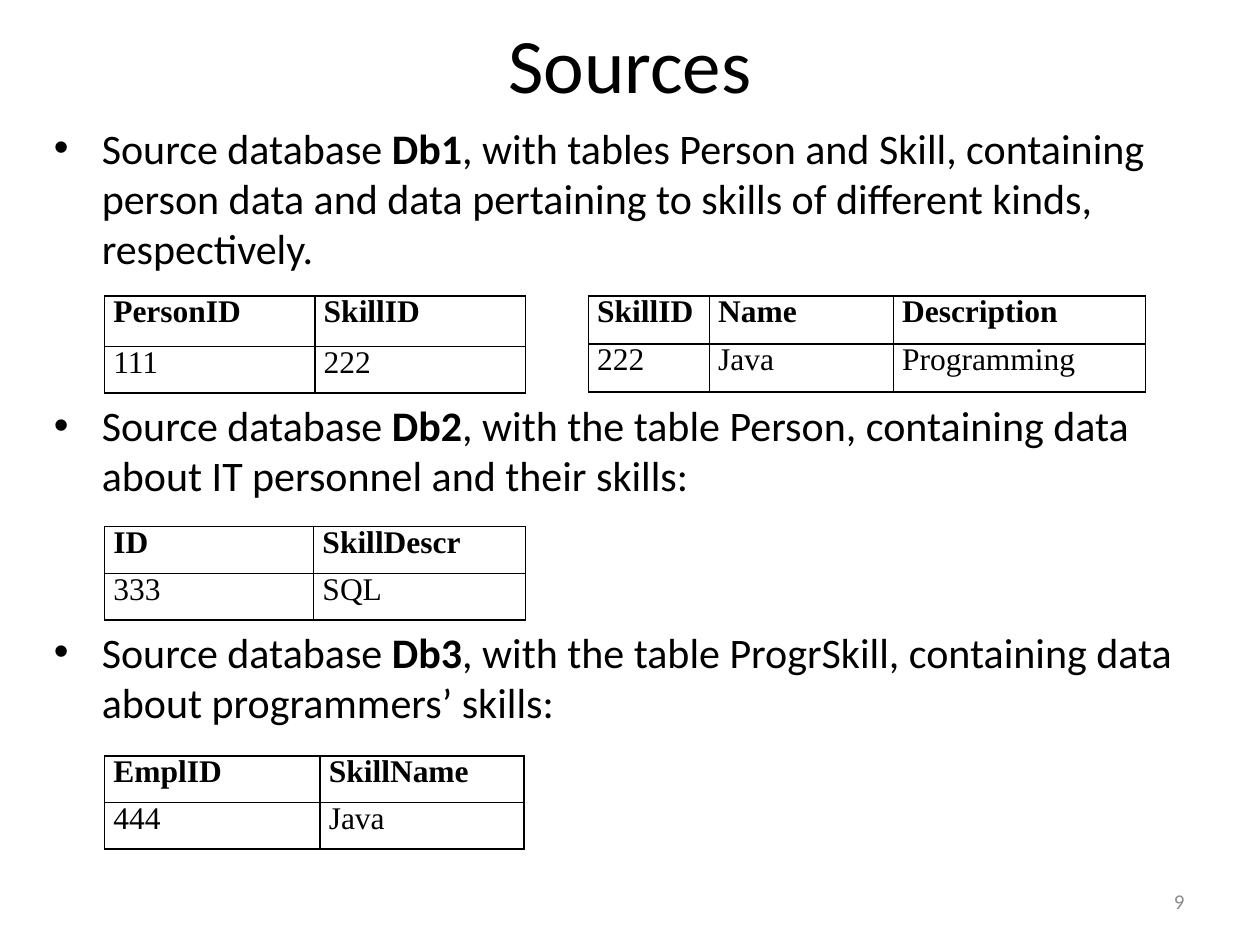
from pptx import Presentation
from pptx.dml.color import RGBColor
from pptx.enum.text import MSO_ANCHOR, PP_ALIGN
from pptx.oxml import parse_xml
from pptx.oxml.ns import nsdecls
from pptx.util import Inches, Pt

BLACK = RGBColor(0x00, 0x00, 0x00)
GRAY = RGBColor(0x8C, 0x8C, 0x8C)


def style(r, size, color=BLACK, font="Calibri", bold=False):
    r.font.size = Pt(size)
    r.font.name = font
    r.font.color.rgb = color
    r.font.bold = bold


def add_box(left, top, width, height, anchor):
    tf = s.shapes.add_textbox(Inches(left), Inches(top), Inches(width), Inches(height)).text_frame
    tf.word_wrap = True
    tf.vertical_anchor = anchor
    return tf


prs = Presentation()
prs.slide_width, prs.slide_height = Inches(10), Inches(7.5)
s = prs.slides.add_slide(prs.slide_layouts[6])

# Title and slide number
for text, box, align, size, color in [
    ("Sources", (0.5, 0, 9, 1), PP_ALIGN.CENTER, 44, BLACK),
    ("9", (7.17, 6.95, 2.33, 0.4), PP_ALIGN.RIGHT, 12, GRAY),
]:
    p = add_box(*box, MSO_ANCHOR.MIDDLE).paragraphs[0]
    p.text = text
    p.alignment = align
    style(p.runs[0], size, color)

# Bulleted source descriptions, spaced to leave room for the tables
sources = [
    ("Db1", ", with tables Person and Skill, containing person data and data "
            "pertaining to skills of different kinds, respectively."),
    ("Db2", ", with the table Person, containing data about IT personnel and their skills:"),
    ("Db3", ", with the table ProgrSkill, containing data about programmers’ skills:"),
]
tf = add_box(0.33, 0.92, 9.5, 5.92, MSO_ANCHOR.TOP)
for i, (name, description) in enumerate(sources):
    p = tf.paragraphs[0] if i == 0 else tf.add_paragraph()
    p.space_before = Pt(72 if i else 0)
    for text in ("Source database ", name, description):
        r = p.add_run()
        r.text = text
        style(r, 24, bold=text == name)
    pPr = p._p.get_or_add_pPr()
    pPr.set("marL", str(Inches(0.38)))
    pPr.set("indent", str(-Inches(0.38)))
    pPr.append(parse_xml(f'<a:buFont {nsdecls("a")} typeface="Arial"/>'))
    pPr.append(parse_xml(f'<a:buChar {nsdecls("a")} char="•"/>'))

# Sample tables: left, top, column widths, row heights, rows
tables = [
    (0.83, 2.35, (1.67, 1.67), (0.4, 0.37), [("PersonID", "SkillID"), ("111", "222")]),
    (4.67, 2.35, (0.96, 1.46, 2), (0.38, 0.38),
     [("SkillID", "Name", "Description"), ("222", "Java", "Programming")]),
    (0.83, 4.18, (1.66, 1.68), (0.37, 0.37), [("ID", "SkillDescr"), ("333", "SQL")]),
    (0.83, 6, (1.71, 1.62), (0.37, 0.37), [("EmplID", "SkillName"), ("444", "Java")]),
]
for left, top, widths, heights, rows in tables:
    table = s.shapes.add_table(len(rows), len(widths), Inches(left), Inches(top),
                               Inches(sum(widths)), Inches(sum(heights))).table
    table.horz_banding = False
    for column, width in zip(table.columns, widths):
        column.width = Inches(width)
    for i, values in enumerate(rows):
        table.rows[i].height = Inches(heights[i])
        for j, text in enumerate(values):
            cell = table.cell(i, j)
            cell.margin_left = cell.margin_right = Inches(0.07)
            cell.margin_top = cell.margin_bottom = Inches(0.1)
            p = cell.text_frame.paragraphs[0]
            p.text = text
            p.line_spacing = Pt(12)
            style(p.runs[0], 18, font="Times New Roman", bold=i == 0)
            # Borders go before the fill in the cell properties
            tcPr = cell._tc.get_or_add_tcPr()
            for side in ("lnL", "lnR", "lnT", "lnB"):
                tcPr.append(parse_xml(
                    f'<a:{side} {nsdecls("a")} w="{Pt(1)}"><a:solidFill>'
                    f'<a:srgbClr val="{BLACK}"/></a:solidFill></a:{side}>'))
            cell.fill.background()

prs.save("out.pptx")
